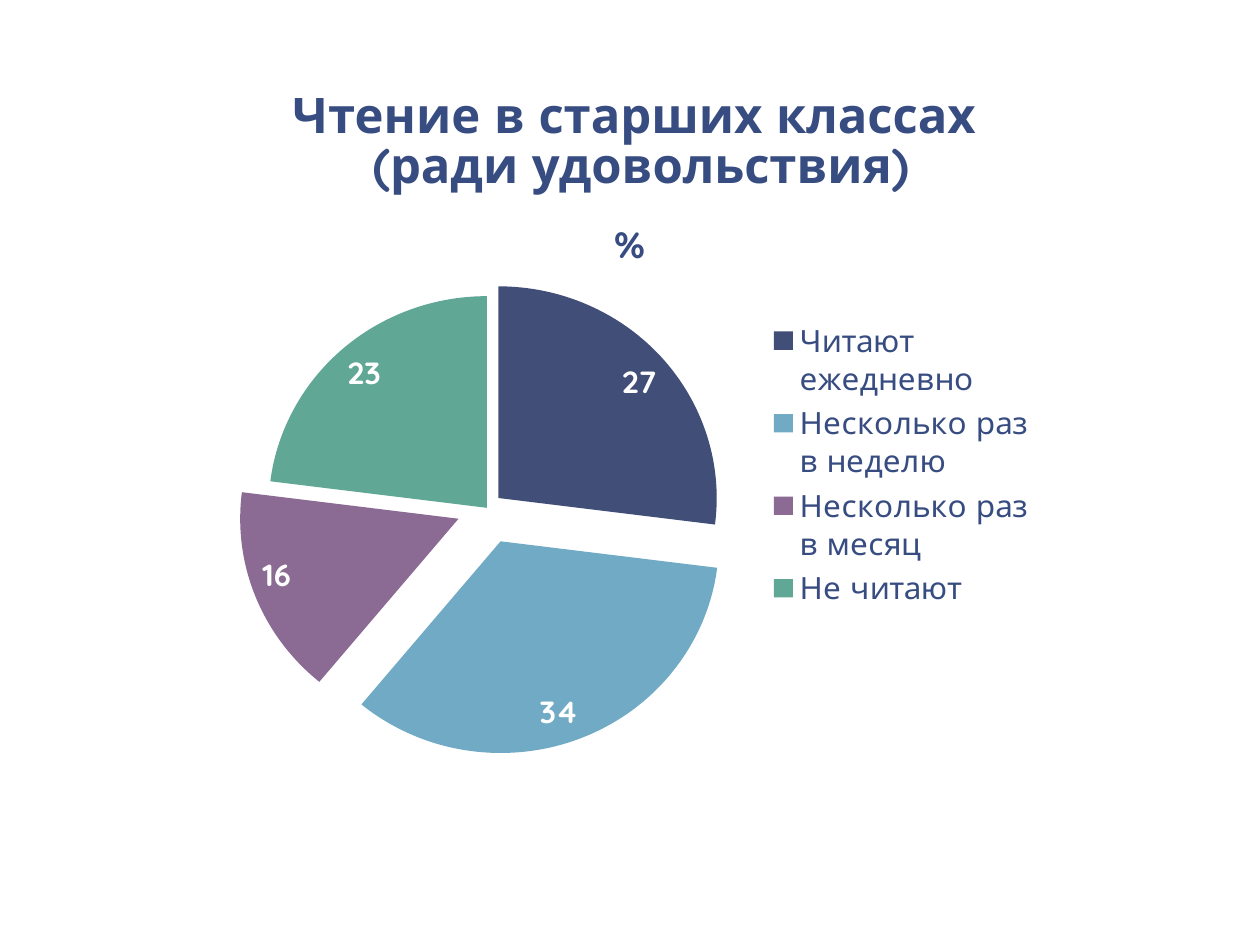
from dataclasses import dataclass

from lxml.etree import SubElement
from pptx import Presentation
from pptx.chart.data import CategoryChartData
from pptx.dml.color import RGBColor
from pptx.enum.chart import XL_CHART_TYPE as ChartType
from pptx.enum.chart import XL_LABEL_POSITION as LabelPosition
from pptx.enum.chart import XL_LEGEND_POSITION as LegendPosition
from pptx.enum.text import MSO_ANCHOR as Anchor
from pptx.enum.text import PP_ALIGN as Align
from pptx.oxml.ns import qn
from pptx.util import Cm, Pt


@dataclass(frozen=True)
class Theme:
    font: str = "Quicksand"
    ink: str = "374C81"
    white: str = "FFFFFF"
    slices: tuple = ("414E77", "70AAC4", "8B6A94", "61A796")
    title_size: float = 28
    chart_title_size: float = 21.6
    chart_size: float = 18


THEME = Theme()

# Category, percentage, distance of the slice from the centre
READING = [
    ("Читают ежедневно", 27, 7),
    ("Несколько раз в неделю", 34, 17),
    ("Несколько раз в месяц", 16, 14),
    ("Не читают", 23, 0),
]


def style_font(font, size, color, bold=False):
    font.name = THEME.font
    font.size = Pt(size)
    font.bold = bold
    font.color.rgb = RGBColor.from_string(color)


def place_plot(chart, **fractions):
    """Fix the inner plot area as fractions of the chart box."""
    plot_area = chart.plots[0]._element.getparent()
    layout = plot_area.find(qn("c:layout"))
    if layout is None:
        layout = SubElement(plot_area, qn("c:layout"))
        plot_area.insert(0, layout)
    manual = SubElement(layout, qn("c:manualLayout"))
    settings = {"layoutTarget": "inner", "xMode": "edge", "yMode": "edge", **fractions}
    for name, value in settings.items():
        SubElement(manual, qn(f"c:{name}")).set("val", str(value))


def add_title(page, left, top, width, height):
    title = page.shapes.title
    title.left, title.top, title.width, title.height = left, top, width, height
    frame = title.text_frame
    frame.word_wrap = True
    frame.vertical_anchor = Anchor.BOTTOM
    frame.margin_left = frame.margin_right = Cm(0.33)
    frame.margin_top = frame.margin_bottom = Cm(0.18)
    para = frame.paragraphs[0]
    para.text = "Чтение в старших классах \v(ради удовольствия)"
    para.alignment = Align.CENTER
    para.line_spacing = 0.85
    style_font(para.font, THEME.title_size, THEME.ink, bold=True)


def add_reading_pie(page, left, top, width, height):
    names, values, explosions = zip(*READING)
    data = CategoryChartData(number_format="General")
    data.categories = names
    data.add_series("%", values)
    chart = page.shapes.add_chart(ChartType.PIE, left, top, width, height, data).chart
    style_font(chart.font, THEME.chart_size, THEME.ink)

    # Chart title and legend
    chart.has_title = True
    para = chart.chart_title.text_frame.paragraphs[0]
    para.text = "%"
    style_font(para.font, THEME.chart_title_size, THEME.ink, bold=True)
    chart.has_legend = True
    chart.legend.position = LegendPosition.RIGHT
    chart.legend.include_in_layout = False
    style_font(chart.legend.font, THEME.chart_size, THEME.ink)

    # Slices
    plot = chart.plots[0]
    plot.vary_by_categories = True
    series = plot.series[0]
    for index, (color, explosion) in enumerate(zip(THEME.slices, explosions)):
        point = series.points[index]
        point.format.fill.solid()
        point.format.fill.fore_color.rgb = RGBColor.from_string(color)
        point.format.line.fill.background()
        slice_xml = point.format._element if hasattr(point.format, "_element") else None
        if slice_xml is None:
            slice_xml = series._element.findall(qn("c:dPt"))[index]
        offset = SubElement(slice_xml, qn("c:explosion"))
        offset.set("val", str(explosion))
        slice_xml.find(qn("c:spPr")).addprevious(offset)

    # Value labels
    labels = series.data_labels
    labels.show_value = True
    labels.show_percentage = False
    labels.position = LabelPosition.INSIDE_END
    style_font(labels.font, THEME.chart_size, THEME.white, bold=True)
    place_plot(chart, x=0.07, y=0.19, w=0.52, h=0.78)


def main():
    deck = Presentation()
    deck.slide_width, deck.slide_height = Cm(25.4), Cm(19.05)
    page = deck.slides.add_slide(deck.slide_layouts[5])
    add_title(page, Cm(2.34), Cm(0.2), Cm(21.16), Cm(3.89))
    add_reading_pie(page, Cm(4.23), Cm(3.89), Cm(16.93), Cm(11.29))
    deck.save("out.pptx")


if __name__ == "__main__":
    main()
